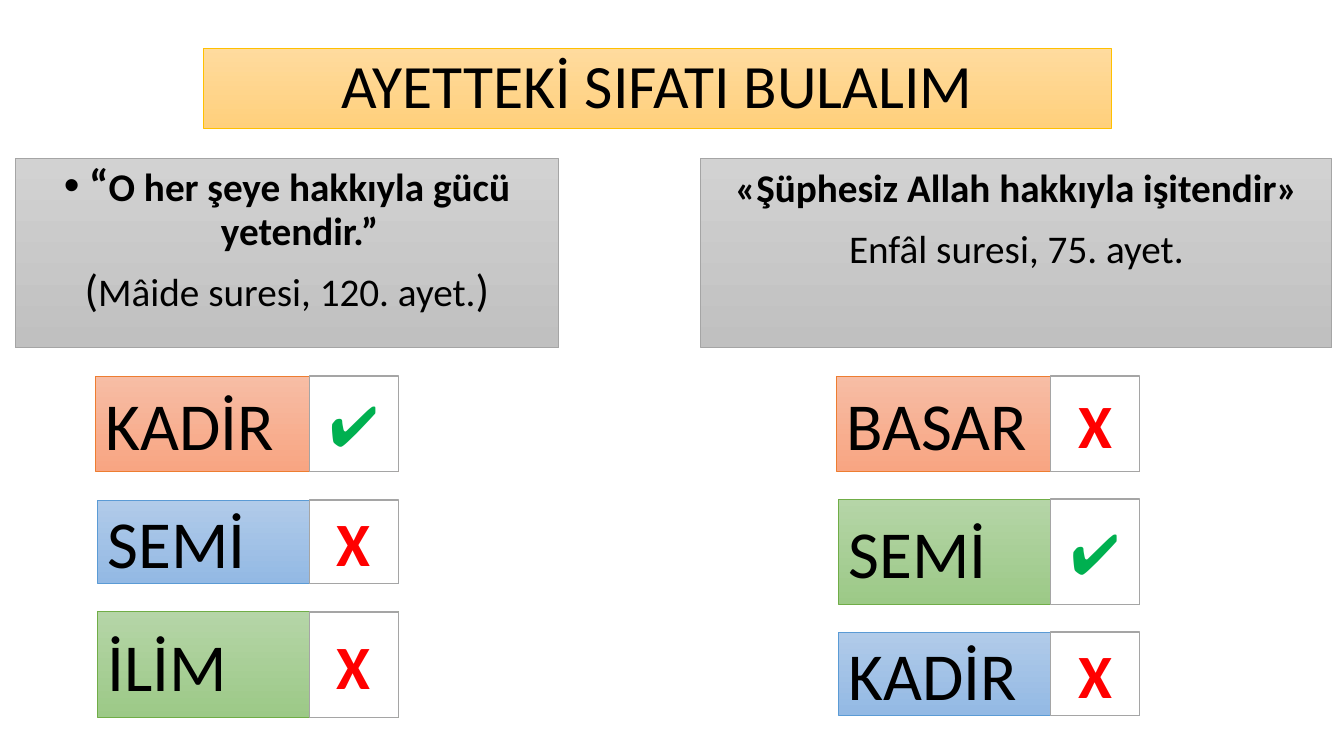
from pptx import Presentation
from pptx.dml.color import RGBColor
from pptx.enum.shapes import MSO_SHAPE
from pptx.enum.text import MSO_ANCHOR, PP_ALIGN
from pptx.oxml.ns import qn
from pptx.util import Inches, Pt
from lxml.etree import SubElement

FONT = "Calibri"
TITLE = "AYETTEKİ SIFATI BULALIM"
TITLE_AT = (15.15, 6.4, 67.52, 10.53)
QUOTE_TOP, QUOTE_H = 20.93, 25.07
ANSWER_TOP, MARK_W = 49.73, 6.6

# name: gradient start, gradient end, outline
PAINT = {
    "gold": ("FFDB9E", "FFD07C", "FFC000"),
    "gray": ("D2D2D2", "C0C0C0", "A5A5A5"),
    "salmon": ("F7BDA5", "F8A582", "ED7D31"),
    "blue": ("B1CBE9", "93B9E4", "5B9BD5"),
    "green": ("B5D5A7", "9CC987", "70AD47"),
}
LABEL_SIZE = {"salmon": (22.51, 12.67), "blue": (22.36, 11.07), "green": (22.36, 14)}
MARKS = {"✔": (40, "00B050", False), "X": (44, "FF0000", True)}

QUESTIONS = [
    {"left": 1.13, "width": 40.44, "spacing": 0.9, "bullet": True,
     "quote": [[("“", 32, True), ("O her şeye hakkıyla gücü yetendir.”", 28, True)],
               [("(", 32, False), ("Mâide suresi, 120. ayet.", 28, False), (")", 32, False)]],
     "right": 29.63, "gap": 3.73,
     "answers": [("KADİR", "salmon", "✔"), ("SEMİ", "blue", "X"), ("İLİM", "green", "X")]},
    {"left": 52.14, "width": 46.96, "spacing": None, "bullet": False,
     "quote": [[("«Şüphesiz Allah hakkıyla işitendir»", 28, True)],
               [("Enfâl suresi, 75. ayet.", 28, False)]],
     "right": 84.77, "gap": 3.6,
     "answers": [("BASAR", "salmon", "X"), ("SEMİ", "green", "✔"), ("KADİR", "blue", "X")]},
]


def rgb(value):
    return RGBColor.from_string(value)


def add_box(s, at, paint=None):
    x, y, w, h = at
    sp = s.shapes.add_shape(MSO_SHAPE.RECTANGLE, int(W * x / 100), int(H * y / 100),
                            int(W * w / 100), int(H * h / 100))
    sp.shadow.inherit = False
    if paint:
        *stops, line = PAINT[paint]
        sp.fill.gradient()
        sp.fill.gradient_angle = 270
        for stop, color in zip(sp.fill.gradient_stops, stops):
            stop.color.rgb = rgb(color)
    else:
        line = "A5A5A5"
        sp.fill.solid()
        sp.fill.fore_color.rgb = rgb("FFFFFF")
    sp.line.color.rgb = rgb(line)
    sp.line.width = Pt(0.5 if paint else 1)
    sp.text_frame.word_wrap = True
    return sp.text_frame


def write(tf, paragraphs, align=PP_ALIGN.CENTER, color="000000",
          anchor=MSO_ANCHOR.MIDDLE, spacing=None, before=0):
    tf.vertical_anchor = anchor
    for i, runs in enumerate(paragraphs):
        p = tf.add_paragraph() if i else tf.paragraphs[0]
        p.alignment, p.line_spacing, p.space_before = align, spacing, Pt(before)
        for text, size, bold in runs:
            r = p.add_run()
            r.text = text
            r.font.name, r.font.size, r.font.bold = FONT, Pt(size), bold
            r.font.color.rgb = rgb(color)


def add_bullet(p):
    pPr = p._p.get_or_add_pPr()
    pPr.set("marL", str(Inches(0.25)))
    pPr.set("indent", str(-Inches(0.25)))
    SubElement(pPr, qn("a:buFont")).set("typeface", "Arial")
    SubElement(pPr, qn("a:buChar")).set("char", "•")


def add_question(s, q):
    tf = add_box(s, (q["left"], QUOTE_TOP, q["width"], QUOTE_H), "gray")
    write(tf, q["quote"], anchor=MSO_ANCHOR.TOP, spacing=q["spacing"], before=10)
    if q["bullet"]:
        add_bullet(tf.paragraphs[0])
    y = ANSWER_TOP
    for label, paint, mark in q["answers"]:
        w, h = LABEL_SIZE[paint]
        size, color, bold = MARKS[mark]
        write(add_box(s, (q["right"] - w, y, w, h), paint),
              [[(label, 48, False)]], PP_ALIGN.LEFT)
        write(add_box(s, (q["right"] - MARK_W, y, MARK_W, h)),
              [[(mark, size, bold)]], color=color)
        y += h + q["gap"]


def main():
    """Build the quiz slide on the attributes named in two verses."""
    s = prs.slides.add_slide(prs.slide_layouts[6])
    write(add_box(s, TITLE_AT, "gold"), [[(TITLE, 44, False)]], spacing=0.9)
    for q in QUESTIONS:
        add_question(s, q)
    prs.save("out.pptx")


prs = Presentation()
prs.slide_width, prs.slide_height = W, H = Inches(13.33), Inches(7.5)

if __name__ == "__main__":
    main()
